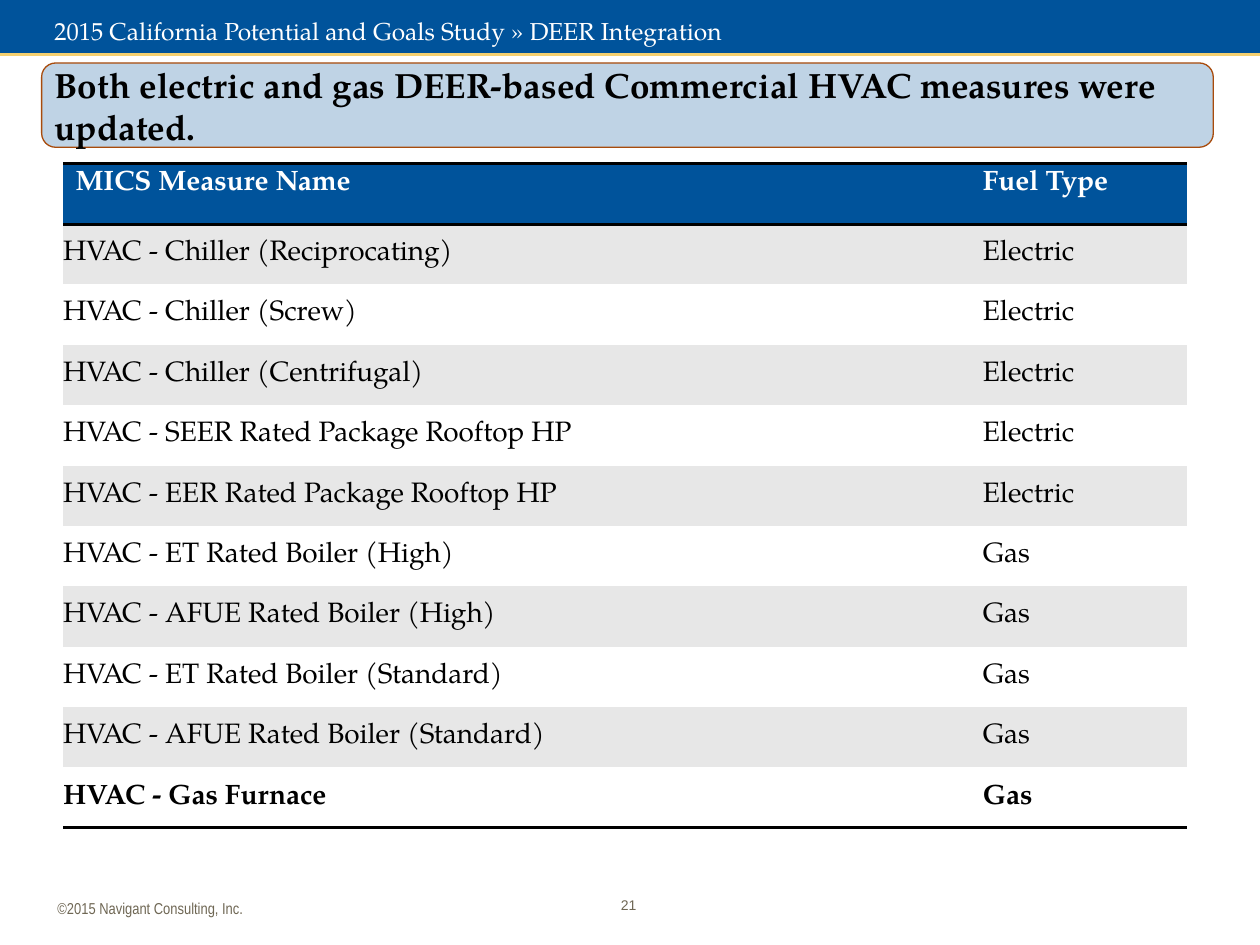
"""Build the slide listing the updated DEER-based Commercial HVAC measures."""
from dataclasses import dataclass

import lxml.etree
import pptx
import pptx.dml.color
import pptx.enum.shapes
import pptx.enum.text
import pptx.oxml
import pptx.oxml.ns
import pptx.util

Cm = pptx.util.Cm
Pt = pptx.util.Pt
qn = pptx.oxml.ns.qn
rgb = pptx.dml.color.RGBColor.from_string
Anchor = pptx.enum.text.MSO_ANCHOR
Align = pptx.enum.text.PP_ALIGN
Shape = pptx.enum.shapes.MSO_SHAPE


@dataclass(frozen=True)
class Theme:
    serif: str = "TeX Gyre Pagella"
    sans: str = "Arial"
    narrow: str = "Arial Narrow"
    blue: str = "00539B"
    gold: str = "F5D070"
    rust: str = "A84B0C"
    grey: str = "E7E7E7"
    taupe: str = "6F6754"
    black: str = "000000"
    white: str = "FFFFFF"
    headline_size: int = 20
    table_size: int = 16
    section_size: int = 14
    copyright_size: int = 9
    number_size: int = 8


theme = Theme()


def style(paragraph, face, size, color, bold=False):
    paragraph.font.name = face
    paragraph.font.size = Pt(size)
    paragraph.font.color.rgb = rgb(color)
    paragraph.font.bold = bold


def set_borders(cell, ruled_sides):
    properties = cell._tc.get_or_add_tcPr()
    for position, side in enumerate("LRTB"):
        border = lxml.etree.Element(qn(f"a:ln{side}"))
        if side in ruled_sides:
            border.set("w", str(Pt(2)))
            fill = lxml.etree.SubElement(border, qn("a:solidFill"))
            lxml.etree.SubElement(fill, qn("a:srgbClr"), val=theme.black)
        else:
            lxml.etree.SubElement(border, qn("a:noFill"))
        properties.insert(position, border)


deck = pptx.Presentation()
deck.slide_width, deck.slide_height = Cm(25.4), Cm(19.05)
slide = deck.slides.add_slide(deck.slide_layouts[1])
section, headline = slide.placeholders

gold_rule = slide.shapes.add_connector(
    pptx.enum.shapes.MSO_CONNECTOR.STRAIGHT, Cm(25.4), Cm(1.07), Cm(0), Cm(1.07))
gold_rule.line.color.rgb = rgb(theme.gold)
gold_rule.line.width = Pt(3)
lxml.etree.SubElement(gold_rule.element.spPr, qn("a:effectLst"))

header_band = slide.shapes.add_shape(Shape.RECTANGLE, Cm(0), Cm(0), Cm(25.4), Cm(1.07))
header_band.shadow.inherit = False
header_band.fill.solid()
header_band.fill.fore_color.rgb = rgb(theme.blue)
header_band.line.fill.background()

headline_panel = slide.shapes.add_shape(
    Shape.ROUNDED_RECTANGLE, Cm(0.84), Cm(1.27), Cm(23.62), Cm(1.7))
headline_panel.shadow.inherit = False
headline_panel.fill.solid()
headline_panel.fill.fore_color.rgb = rgb(theme.blue)
panel_color = headline_panel.element.spPr.find(qn("a:solidFill"))[0]
lxml.etree.SubElement(panel_color, qn("a:alpha"), val="25000")
headline_panel.line.color.rgb = rgb(theme.rust)
headline_panel.line.width = Pt(0.75)

for holder, top, height, anchor, text, size, color, bold in (
    (headline, 1.27, 1.7, Anchor.MIDDLE,
     "Both electric and gas DEER-based Commercial HVAC measures were updated.",
     theme.headline_size, theme.black, True),
    (section, 0.2, 0.64, Anchor.TOP,
     "2015 California Potential and Goals Study » DEER Integration",
     theme.section_size, theme.white, False),
):
    holder.left, holder.top = Cm(0.84), Cm(top)
    holder.width, holder.height = Cm(23.62), Cm(height)
    holder.element.getparent().append(holder.element)
    frame = holder.text_frame
    frame.text = text
    frame.word_wrap = True
    frame.auto_size = pptx.enum.text.MSO_AUTO_SIZE.NONE
    frame.vertical_anchor = anchor
    line = frame.paragraphs[0]
    line.alignment = Align.LEFT
    line.space_before = Pt(0)
    paragraph_properties = line._p.get_or_add_pPr()
    paragraph_properties.set("marL", "0")
    paragraph_properties.set("indent", "0")
    lxml.etree.SubElement(paragraph_properties, qn("a:buNone"))
    style(line, theme.serif, size, color, bold)

measures = [
    ("MICS Measure Name", "Fuel Type"),
    ("HVAC - Chiller (Reciprocating)", "Electric"),
    ("HVAC - Chiller (Screw)", "Electric"),
    ("HVAC - Chiller (Centrifugal)", "Electric"),
    ("HVAC - SEER Rated Package Rooftop HP", "Electric"),
    ("HVAC - EER Rated Package Rooftop HP", "Electric"),
    ("HVAC - ET Rated Boiler (High)", "Gas"),
    ("HVAC - AFUE Rated Boiler (High)", "Gas"),
    ("HVAC - ET Rated Boiler (Standard)", "Gas"),
    ("HVAC - AFUE Rated Boiler (Standard)", "Gas"),
    ("HVAC - Gas Furnace", "Gas"),
]
last = len(measures) - 1
measure_table = slide.shapes.add_table(
    len(measures), 2, Cm(1.27), Cm(3.3), Cm(22.66), Cm(13.39)).table
measure_table.columns[0].width = Cm(18.29)
measure_table.columns[1].width = Cm(4.37)
measure_table.horz_banding = False

for row, entries in enumerate(measures):
    is_header = row == 0
    band = theme.blue if is_header else theme.grey if row % 2 else theme.white
    ruled_sides = {0: "TB", 1: "T", last: "B"}.get(row, "")
    for column, entry in enumerate(entries):
        cell = measure_table.cell(row, column)
        cell.text = entry
        cell.fill.solid()
        cell.fill.fore_color.rgb = rgb(band)
        cell.vertical_anchor = Anchor.TOP if is_header else Anchor.MIDDLE
        if column == 0 and not is_header:
            cell.margin_left = cell.margin_right = Cm(0)
            cell.margin_top = cell.margin_bottom = Cm(0)
        set_borders(cell, ruled_sides)
        style(cell.text_frame.paragraphs[0], theme.serif, theme.table_size,
              theme.white if is_header else theme.black, row in (0, last))

for left, top, width, height, margin, text, face, size, alignment in (
    (12.04, 17.91, 1.27, 0.84, 0.25, "21", theme.sans, theme.number_size, Align.CENTER),
    (0.91, 17.98, 9.68, 0.64, 0.13, "©2015 Navigant Consulting, Inc.",
     theme.narrow, theme.copyright_size, Align.LEFT),
):
    footer = slide.shapes.add_textbox(Cm(left), Cm(top), Cm(width), Cm(height)).text_frame
    footer.word_wrap = True
    footer.margin_top = footer.margin_bottom = Cm(margin)
    footer.text = text
    footer.paragraphs[0].alignment = alignment
    style(footer.paragraphs[0], face, size, theme.taupe)

deck.save("out.pptx")
